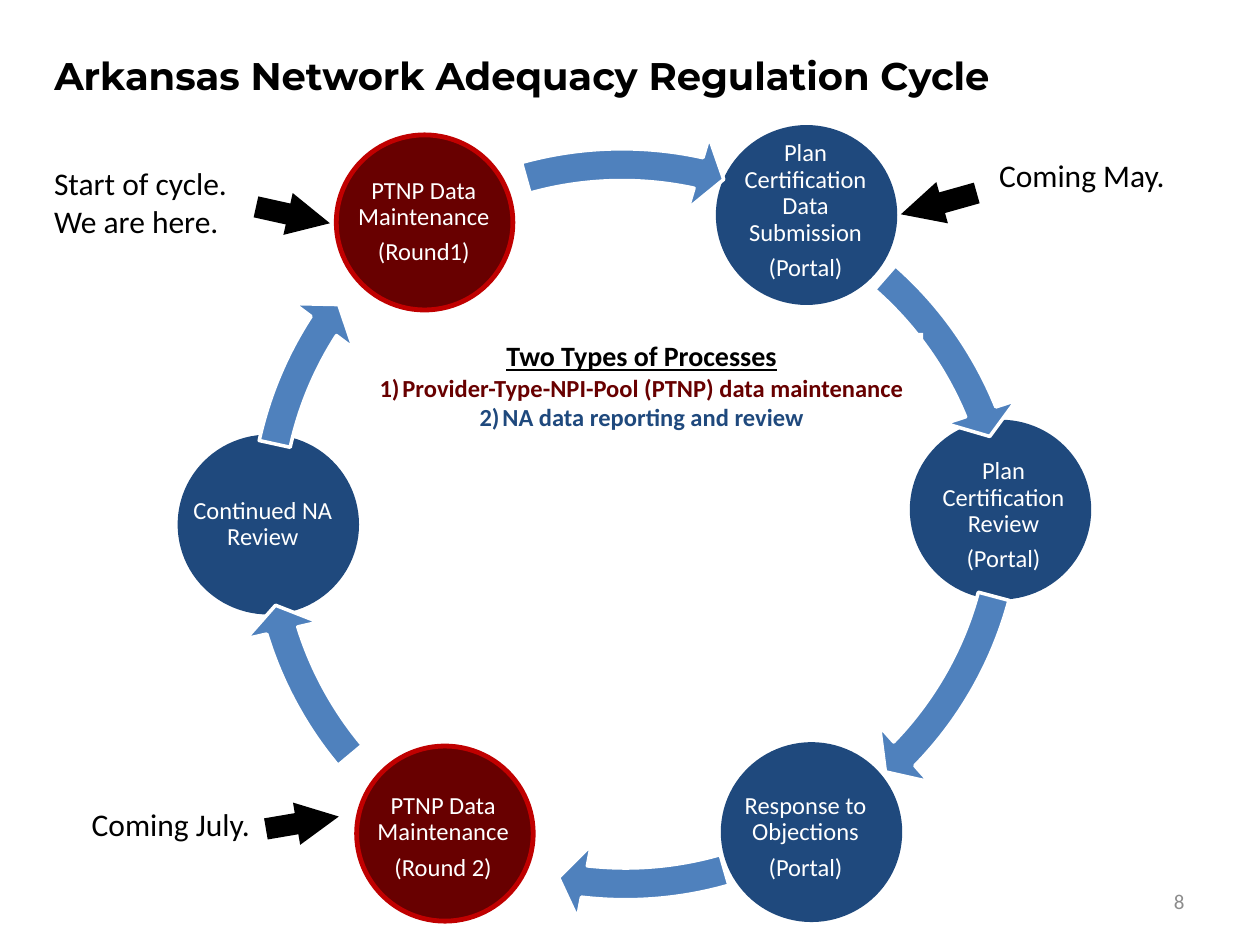
"""Build the Arkansas network adequacy regulation cycle slide."""
from lxml import etree
from pptx import Presentation
from pptx import util as u
from pptx.dml.color import RGBColor
from pptx.enum import shapes, text
from pptx.oxml import ns

NAVY = RGBColor(0x1F, 0x49, 0x7D)
MAROON = RGBColor(0x68, 0x00, 0x00)
RED = RGBColor(0xC0, 0x00, 0x00)
BLUE = RGBColor(0x4F, 0x81, 0xBD)
WHITE = RGBColor(0xFF, 0xFF, 0xFF)
BLACK = RGBColor(0, 0, 0)
GREY = RGBColor(0x8C, 0x8C, 0x8C)

TITLE = "Arkansas Network Adequacy Regulation Cycle"
CIRCLE_SIZE = (3.56, 3.53)
LABEL_HEIGHT = 3.28
ARROW_SIZE = 15.98
REPORTING = (NAVY, NAVY)
MAINTENANCE = (MAROON, RED)

# stage: colours, circle corner, label (left, top, width), label lines, arrow corner, end and start angle
STAGES = [
    (REPORTING, (14.48, 2.57), (14.6, 2.62, 3.28),
     ["Plan Certification Data Submission", "(Portal)"], (5.08, 3.05), (202.68, 186.75)),
    (REPORTING, (18.39, 8.51), (18.59, 8.76, 3.28),
     ["Plan Certification Review", "(Portal)"], (5.05, 2.16), (26.52, 8.99)),
    (REPORTING, (14.58, 15.01), (14.6, 15.24, 3.28),
     ["Response to Objections", "(Portal)"], (4.62, 2.59), (57.94, 44.39)),
    (MAINTENANCE, (7.19, 15.04), (6.65, 15.24, 4.57),
     ["PTNP Data Maintenance", "(Round 2)"], (4.62, 2.59), (97.73, 84.04)),
    (REPORTING, (3.63, 8.81), (3.66, 8.94, 3.28),
     ["Continued NA Review"], (4.62, 2.51), (127.71, 115.42)),
    (MAINTENANCE, (6.78, 2.72), (6.5, 2.84, 4.09),
     ["PTNP Data Maintenance", "(Round1)"], (4.55, 2.57), (169.38, 152.67)),
]
HEADING = "Two Types of Processes"
PROCESSES = [
    ("Provider-Type-NPI-Pool (PTNP) data maintenance", MAROON),
    ("NA data reporting and review", NAVY),
]
NOTES = [
    ("Start of cycle. We are here.", (0.84, 3.18, 4.01, 1.8), (5.16, 4.17, 6.65, 4.5)),
    ("Coming July.", (1.6, 16.1, 4.01, 1.02), (5.36, 16.71, 6.83, 16.46)),
    ("Coming May.", (19.89, 3.02, 4.01, 1.02), (19.69, 3.89, 18.16, 4.32)),
]


def lengths(values):
    return [u.Cm(value) for value in values]


def set_all(target, **values):
    for name, value in values.items():
        setattr(target, name, value)


def add_paragraph(frame, words, size, color, align=text.PP_ALIGN.LEFT, numbered=False,
                  font="Calibri", **font_values):
    paragraph = frame.paragraphs[0]
    if paragraph.runs:
        paragraph = frame.add_paragraph()
    if numbered:
        properties = paragraph._p.get_or_add_pPr()
        properties.set("marL", str(u.Cm(0.46)))
        properties.set("indent", str(u.Cm(-0.46)))
        etree.SubElement(properties, ns.qn("a:buFont"), typeface="+mj-lt")
        etree.SubElement(properties, ns.qn("a:buAutoNum"), type="arabicParenR")
    paragraph.alignment = align
    run = paragraph.add_run()
    run.text = words
    set_all(run.font, name=font, size=u.Pt(size), **font_values)
    run.font.color.rgb = color
    return paragraph


def add_text_box(slide, place, **frame_values):
    frame = slide.shapes.add_textbox(*lengths(place)).text_frame
    set_all(frame, word_wrap=True, **frame_values)
    return frame


def add_filled(slide, kind, place, fill, line=None, width=0):
    shape = slide.shapes.add_shape(kind, *lengths(place))
    shape.shadow.inherit = False
    shape.fill.solid()
    shape.fill.fore_color.rgb = fill
    if line is None:
        shape.line.fill.background()
    else:
        shape.line.color.rgb = line
        shape.line.width = u.Pt(width)
    return shape


def add_stage_label(slide, place, lines):
    inset = u.Cm(0.05)
    frame = add_text_box(slide, (*place, LABEL_HEIGHT), vertical_anchor=text.MSO_ANCHOR.MIDDLE,
                         margin_left=inset, margin_right=inset,
                         margin_top=inset, margin_bottom=inset)
    for words in lines:
        paragraph = add_paragraph(frame, words, 14, WHITE, text.PP_ALIGN.CENTER)
        set_all(paragraph, line_spacing=0.9, space_after=u.Pt(4.9))


def add_cycle(slide):
    for (fill, line), corner, *_ in STAGES:
        add_filled(slide, shapes.MSO_SHAPE.OVAL, (*corner, *CIRCLE_SIZE), fill, line, 2.75)
    for _, _, label_place, lines, corner, (end, start) in STAGES:
        add_stage_label(slide, label_place, lines)
        arrow = add_filled(slide, shapes.MSO_SHAPE.CIRCULAR_ARROW,
                           (*corner, ARROW_SIZE, ARROW_SIZE), BLUE, WHITE, 2)
        for index, value in enumerate((0.04, 2.5, end, start, 0.047)):
            arrow.adjustments[index] = value


def add_processes(slide):
    box = add_filled(slide, shapes.MSO_SHAPE.RECTANGLE, (7.26, 6.71, 11.35, 2.13), WHITE)
    frame = box.text_frame
    set_all(frame, word_wrap=True, vertical_anchor=text.MSO_ANCHOR.TOP)
    center = text.PP_ALIGN.CENTER
    add_paragraph(frame, HEADING, 16, BLACK, center, bold=True, underline=True)
    for words, color in PROCESSES:
        add_paragraph(frame, words, 14, color, center, numbered=True, bold=True)


def add_note(slide, words, place, ends):
    add_paragraph(add_text_box(slide, place), words, 18, BLACK)
    pointer = slide.shapes.add_connector(shapes.MSO_CONNECTOR.STRAIGHT, *lengths(ends))
    pointer.line.color.rgb = BLACK
    pointer.line.width = u.Pt(12.25)
    etree.SubElement(pointer.line._get_or_add_ln(), ns.qn("a:tailEnd"),
                     type="triangle", w="sm", len="sm")
    etree.SubElement(pointer._element.spPr, ns.qn("a:effectLst"))


def main():
    presentation = Presentation()
    set_all(presentation, slide_width=u.Cm(25.4), slide_height=u.Cm(19.05))
    slide = presentation.slides.add_slide(presentation.slide_layouts[5])
    title = slide.shapes.title
    left, top, width, height = lengths((0.84, 0.48, 22.86, 3.18))
    set_all(title, left=left, top=top, width=width, height=height)
    set_all(title.text_frame, vertical_anchor=text.MSO_ANCHOR.MIDDLE, margin_bottom=u.Cm(1.22))
    add_paragraph(title.text_frame, TITLE, 22, BLACK, font="Montserrat", bold=True)
    add_cycle(slide)
    add_processes(slide)
    for note in NOTES:
        add_note(slide, *note)
    number = add_text_box(slide, (18.21, 17.65, 5.92, 1.02),
                          vertical_anchor=text.MSO_ANCHOR.MIDDLE)
    add_paragraph(number, "8", 12, GREY, text.PP_ALIGN.RIGHT)
    presentation.save("out.pptx")


if __name__ == "__main__":
    main()
